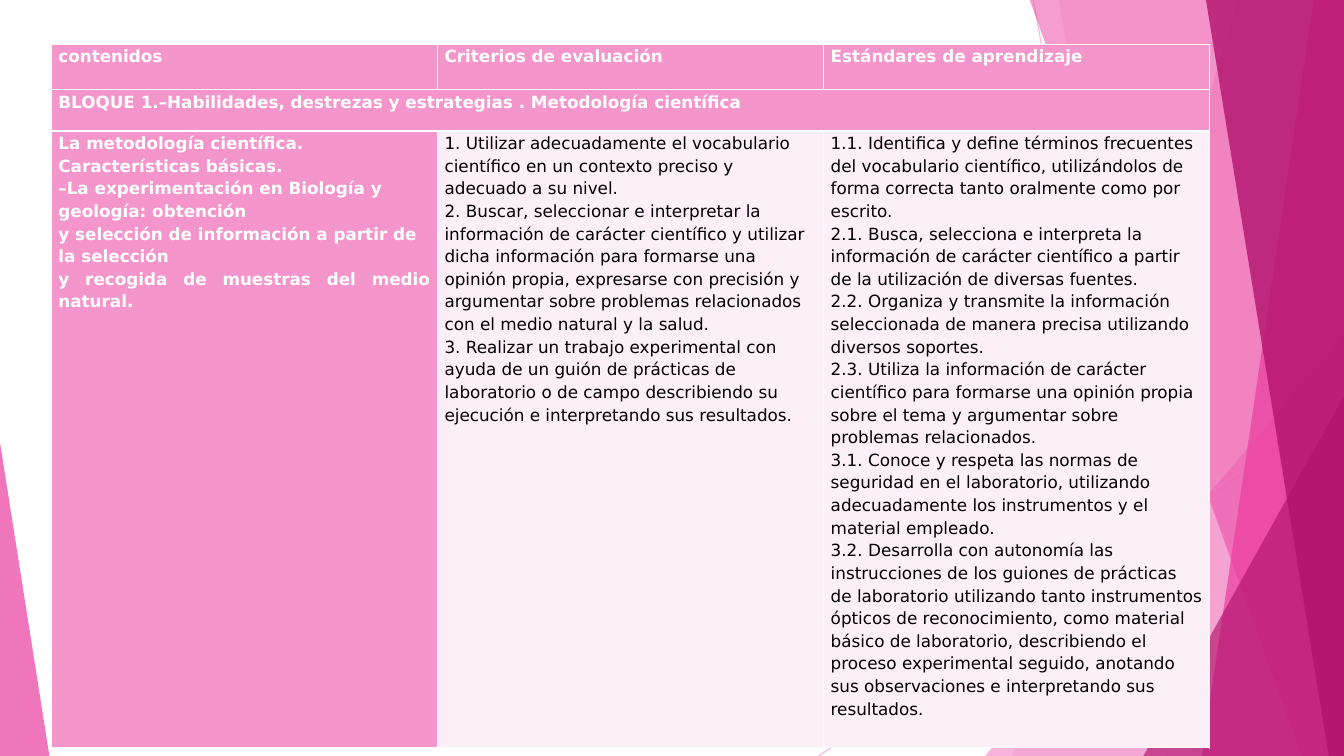
from lxml.etree import SubElement
from pptx import Presentation
from pptx.dml.color import RGBColor
from pptx.enum.shapes import MSO_CONNECTOR, MSO_SHAPE
from pptx.enum.text import PP_ALIGN
from pptx.oxml.ns import qn
from pptx.util import Pt

PX = 9144  # EMU per px, 100 px to the inch
WIDTH, HEIGHT = 1333, 750
FONT, FONT_SIZE, LINE_SPACING = "DejaVu Sans", Pt(12), 1.15

PINK = RGBColor(0xF4, 0x96, 0xCB)
MAGENTA = RGBColor(0xEB, 0x3D, 0x9F)
PLUM = RGBColor(0xB2, 0x13, 0x6D)
PALE = RGBColor(0xFD, 0xEF, 0xF6)
WHITE = RGBColor(0xFF, 0xFF, 0xFF)
BLACK = RGBColor(0, 0, 0)

# Background facets, from back to front
RAYS = [((1025, 0), (1158, 750)), ((1333, 403), (812, 750))]
# Bands reach the right edge: (top x, bottom x, colour, opacity %)
# Triangles: (left, top, width, height, apex position, colour, opacity %)
FACETS = [
    ("band", 1228, 1004, PINK, 36),
    ("band", 1050, 1183, PINK, 20),
    ("triangle", 977, 333, 356, 417, 1, PINK, 72),
    ("band", 1021, 1291, MAGENTA, 50),
    ("band", 1303, 1192, MAGENTA, 70),
    ("band", 1196, 1318, PLUM, 80),
    ("triangle", 1134, 393, 199, 357, 1, PLUM, 66),
    ("triangle", 0, 439, 49, 311, 0, MAGENTA, 70),
]

TABLE_LEFT, TABLE_TOP = 51, 44
COLUMN_WIDTH, ROW_HEIGHTS = 383, [45, 41, 612]
CELL_INSET = 7
HEADINGS = ["contenidos", "Criterios de evaluación", "Estándares de aprendizaje"]
BLOCK = "BLOQUE 1.–Habilidades, destrezas y estrategias . Metodología científica"
CONTENTS = [
    "La metodología científica. Características básicas.",
    "–La experimentación en Biología y geología: obtención",
    "y selección de información a partir de la selección",
    "y recogida de muestras del medio natural.",
]
CRITERIA = [
    "1. Utilizar adecuadamente el vocabulario científico en un contexto preciso y "
    "adecuado a su nivel.",
    "2. Buscar, seleccionar e interpretar la información de carácter científico y "
    "utilizar dicha información para formarse una opinión propia, expresarse con "
    "precisión y argumentar sobre problemas relacionados con el medio natural y la salud.",
    "3. Realizar un trabajo experimental con ayuda de un guión de prácticas de "
    "laboratorio o de campo describiendo su ejecución e interpretando sus resultados.",
]
STANDARDS = [
    "1.1. Identifica y define términos frecuentes del vocabulario científico, "
    "utilizándolos de forma correcta tanto oralmente como por escrito.",
    "2.1. Busca, selecciona e interpreta la información de carácter científico a "
    "partir de la utilización de diversas fuentes.",
    "2.2. Organiza y transmite la información seleccionada de manera precisa "
    "utilizando diversos soportes.",
    "2.3. Utiliza la información de carácter científico para formarse una opinión "
    "propia sobre el tema y argumentar sobre problemas relacionados.",
    "3.1. Conoce y respeta las normas de seguridad en el laboratorio, utilizando "
    "adecuadamente los instrumentos y el material empleado.",
    "3.2. Desarrolla con autonomía las instrucciones de los guiones de prácticas de "
    "laboratorio utilizando tanto instrumentos ópticos de reconocimiento, como "
    "material básico de laboratorio, describiendo el proceso experimental seguido, "
    "anotando sus observaciones e interpretando sus resultados.",
]
ROWS = [
    [[heading] for heading in HEADINGS],
    [[BLOCK], [], []],
    [CONTENTS, CRITERIA, STANDARDS],
]


def set_opacity(fill_owner, percent):
    color = fill_owner.find(".//" + qn("a:srgbClr"))
    SubElement(color, qn("a:alpha")).set("val", str(percent * 1000))


def add_ray(shapes, start, end):
    ray = shapes.add_connector(
        MSO_CONNECTOR.STRAIGHT, *(value * PX for value in start + end))
    ray.line.color.rgb = PINK
    ray.line.width = Pt(0.75)
    properties = ray.element.spPr
    set_opacity(properties, 70)
    SubElement(properties, qn("a:effectLst"))


def add_facet(shapes, kind, *geometry, color, opacity):
    if kind == "band":
        top_x, bottom_x = geometry
        builder = shapes.build_freeform(top_x, -1, scale=PX)
        builder.add_line_segments([(WIDTH, -1), (WIDTH, HEIGHT), (bottom_x, HEIGHT)])
        facet = builder.convert_to_shape()
    else:
        *box, apex = geometry
        facet = shapes.add_shape(
            MSO_SHAPE.ISOSCELES_TRIANGLE, *(value * PX for value in box))
        facet.adjustments[0] = apex
    facet.shadow.inherit = False
    facet.line.fill.background()
    facet.fill.solid()
    facet.fill.fore_color.rgb = color
    set_opacity(facet.element.spPr, opacity)


def fill_cell(cell, lines, is_label):
    """Write the lines in a cell; labels are bold white on pink."""
    cell.margin_left = cell.margin_right = CELL_INSET * PX
    cell.margin_top = cell.margin_bottom = 0
    cell.fill.solid()
    cell.fill.fore_color.rgb = PINK if is_label else PALE
    cell.text_frame.text = "\n".join(lines)
    for paragraph in cell.text_frame.paragraphs:
        paragraph.line_spacing = LINE_SPACING
        for run in paragraph.runs:
            run.font.name = FONT
            run.font.size = FONT_SIZE
            run.font.bold = is_label
            run.font.color.rgb = WHITE if is_label else BLACK
    if is_label:
        cell.text_frame.paragraphs[-1].alignment = PP_ALIGN.JUSTIFY


def add_curriculum(shapes):
    columns = len(HEADINGS)
    table = shapes.add_table(
        len(ROWS), columns, TABLE_LEFT * PX, TABLE_TOP * PX,
        columns * COLUMN_WIDTH * PX, sum(ROW_HEIGHTS) * PX).table
    table.horz_banding = False
    for column in table.columns:
        column.width = COLUMN_WIDTH * PX
    for r, (height, row) in enumerate(zip(ROW_HEIGHTS, ROWS)):
        table.rows[r].height = height * PX
        for c, lines in enumerate(row):
            fill_cell(table.cell(r, c), lines, is_label=r < 2 or c == 0)
    table.cell(1, 0).merge(table.cell(1, columns - 1))


def main():
    prs = Presentation()
    prs.slide_width, prs.slide_height = WIDTH * PX, HEIGHT * PX
    shapes = prs.slides.add_slide(prs.slide_layouts[6]).shapes
    for start, end in RAYS:
        add_ray(shapes, start, end)
    for *geometry, color, opacity in FACETS:
        add_facet(shapes, *geometry, color=color, opacity=opacity)
    add_curriculum(shapes)
    prs.save("out.pptx")


if __name__ == "__main__":
    main()
